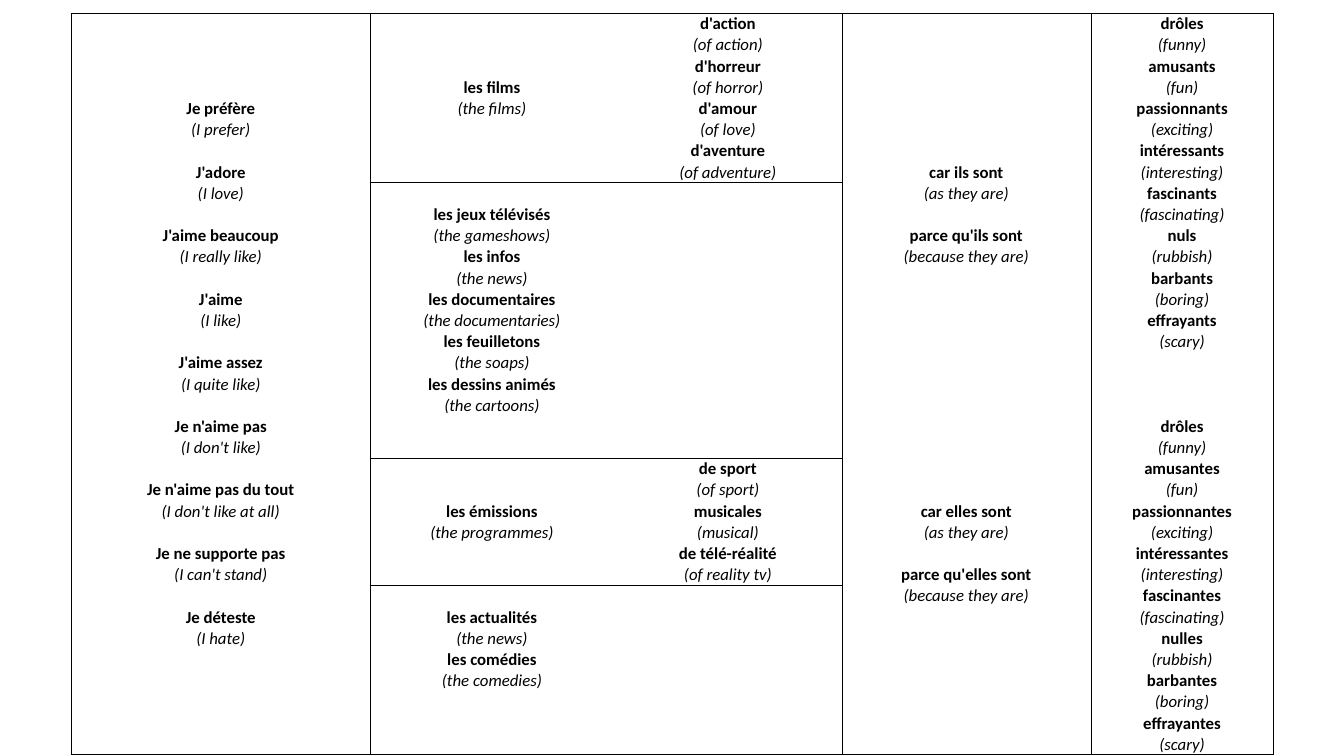
from lxml.etree import SubElement
from pptx import Presentation
from pptx.dml.color import RGBColor
from pptx.enum.text import MSO_ANCHOR, PP_ALIGN
from pptx.oxml.ns import qn
from pptx.util import Inches, Pt

COLORS = {"ink": "000000"}
FONT, SIZE = "Calibri", 12
NO_STYLE = "{2D5ABB26-0587-4C30-8999-92F81FD0307C}"
ROWS, ROW_HEIGHT = 35, 0.18
COL_WIDTHS = [2.96, 2.42, 2.26, 2.47, 1.81]
ADJECTIVE_COL = 4

# Table lines: vertical ones by column edge, horizontal ones by row edge
VERTICAL_EDGES = {0, 1, 3, 4, 5}
OUTER_ROW_EDGES = {0, ROWS}
TOPIC_ROW_EDGES = {8, 21, 27}
TOPIC_COLS = {1, 2}

# (column, first row, rows from one phrase to the next, [(French, English)])
BLOCKS = [
    (0, 4, 3, [
        ("Je préfère", "(I prefer)"),
        ("J'adore", "(I love)"),
        ("J'aime beaucoup", "(I really like)"),
        ("J'aime", "(I like)"),
        ("J'aime assez", "(I quite like)"),
        ("Je n'aime pas", "(I don't like)"),
        ("Je n'aime pas du tout", "(I don't like at all)"),
        ("Je ne supporte pas", "(I can't stand)"),
        ("Je déteste", "(I hate)"),
    ]),
    (1, 3, 2, [("les films", "(the films)")]),
    (1, 9, 2, [
        ("les jeux télévisés", "(the gameshows)"),
        ("les infos", "(the news)"),
        ("les documentaires", "(the documentaries)"),
        ("les feuilletons", "(the soaps)"),
        ("les dessins animés", "(the cartoons)"),
    ]),
    (1, 23, 2, [("les émissions", "(the programmes)")]),
    (1, 28, 2, [
        ("les actualités", "(the news)"),
        ("les comédies", "(the comedies)"),
    ]),
    (2, 0, 2, [
        ("d'action", "(of action)"),
        ("d'horreur", "(of horror)"),
        ("d'amour", "(of love)"),
        ("d'aventure", "(of adventure)"),
    ]),
    (2, 21, 2, [
        ("de sport", "(of sport)"),
        ("musicales", "(musical)"),
        ("de télé-réalité", "(of reality tv)"),
    ]),
    (3, 7, 3, [
        ("car ils sont", "(as they are)"),
        ("parce qu'ils sont", "(because they are)"),
    ]),
    (3, 23, 3, [
        ("car elles sont", "(as they are)"),
        ("parce qu'elles sont", "(because they are)"),
    ]),
    (ADJECTIVE_COL, 0, 2, [
        ("drôles", "(funny)"),
        ("amusants", "(fun)"),
        ("passionnants", "(exciting)"),
        ("intéressants", "(interesting)"),
        ("fascinants", "(fascinating)"),
        ("nuls", "(rubbish)"),
        ("barbants", "(boring)"),
        ("effrayants", "(scary)"),
    ]),
    (ADJECTIVE_COL, 19, 2, [
        ("drôles", "(funny)"),
        ("amusantes", "(fun)"),
        ("passionnantes", "(exciting)"),
        ("intéressantes", "(interesting)"),
        ("fascinantes", "(fascinating)"),
        ("nulles", "(rubbish)"),
        ("barbantes", "(boring)"),
        ("effrayantes", "(scary)"),
    ]),
]


def cell_borders(row, col):
    """Return each side's tag and whether that side carries a line."""
    row_edges = OUTER_ROW_EDGES | (TOPIC_ROW_EDGES if col in TOPIC_COLS else set())
    return [
        ("a:lnL", col in VERTICAL_EDGES),
        ("a:lnR", col + 1 in VERTICAL_EDGES),
        ("a:lnT", row in row_edges),
        ("a:lnB", row + 1 in row_edges),
    ]


def format_cell(cell, row, col):
    cell.margin_left = cell.margin_right = cell.margin_top = Pt(0.5)
    cell.margin_bottom = 0
    cell.vertical_anchor = MSO_ANCHOR.BOTTOM if col == ADJECTIVE_COL else MSO_ANCHOR.MIDDLE
    tc_pr = cell._tc.get_or_add_tcPr()
    for tag, drawn in cell_borders(row, col):
        line = SubElement(tc_pr, qn(tag), w=str(Pt(0.5) if drawn else 0))
        fill = SubElement(line, qn("a:solidFill" if drawn else "a:noFill"))
        if drawn:
            SubElement(fill, qn("a:srgbClr"), val=COLORS["ink"])
    cell.fill.background()
    # Empty cells need the small size too, or they stretch their row
    p = cell.text_frame.paragraphs[0]
    SubElement(p._p, qn("a:endParaRPr"), sz=str(SIZE * 100))


def write(cell, text, bold):
    p = cell.text_frame.paragraphs[0]
    p.alignment = PP_ALIGN.CENTER
    p.font.name, p.font.size = FONT, Pt(SIZE)
    p.font.bold, p.font.italic = bold, not bold
    p.font.color.rgb = RGBColor.from_string(COLORS["ink"])
    p.add_run().text = text


def main():
    prs = Presentation()
    prs.slide_width, prs.slide_height = Inches(13.33), Inches(7.5)
    s = prs.slides.add_slide(prs.slide_layouts[6])
    frame = s.shapes.add_table(ROWS, len(COL_WIDTHS), Inches(0.71), Inches(0.13),
                               Inches(sum(COL_WIDTHS)), Inches(ROWS * ROW_HEIGHT))
    table = frame.table
    table.first_row = table.horz_banding = False
    table._tbl.tblPr.find(qn("a:tableStyleId")).text = NO_STYLE

    for column, width in zip(table.columns, COL_WIDTHS):
        column.width = Inches(width)
    for row in range(ROWS):
        table.rows[row].height = Inches(ROW_HEIGHT)
        for col in range(len(COL_WIDTHS)):
            format_cell(table.cell(row, col), row, col)

    for col, first, step, phrases in BLOCKS:
        for i, (french, english) in enumerate(phrases):
            row = first + i * step
            write(table.cell(row, col), french, bold=True)
            write(table.cell(row + 1, col), english, bold=False)

    prs.save("out.pptx")


if __name__ == "__main__":
    main()
